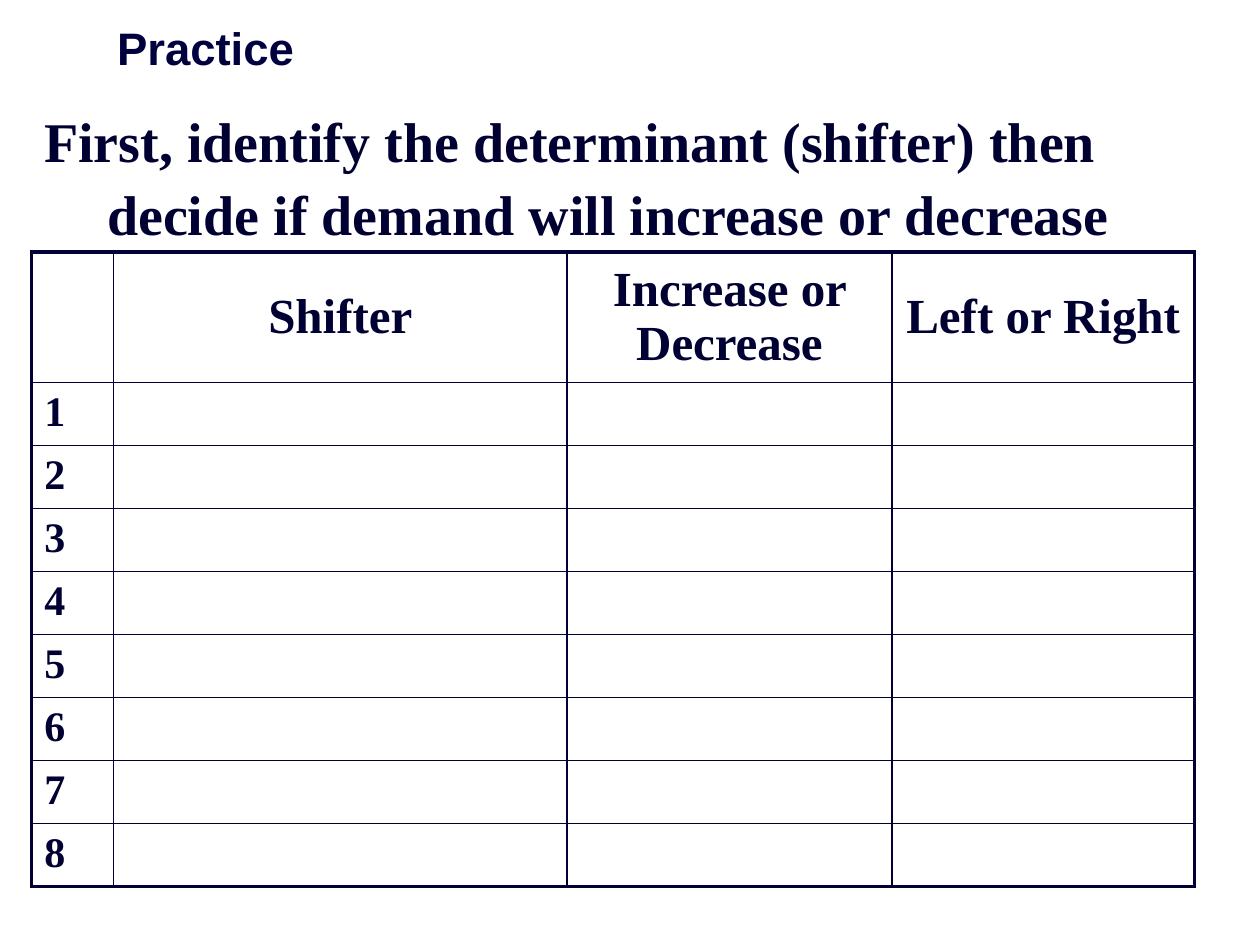
from dataclasses import dataclass

from lxml import etree
from pptx import Presentation
from pptx.dml.color import RGBColor
from pptx.enum import text
from pptx.oxml import ns
from pptx.util import Cm, Pt


@dataclass(frozen=True)
class Theme:
    title_color: str = "00003E"
    ink: str = "000032"
    heading_font: str = "Arial"
    body_font: str = "Times New Roman"
    title_size: float = 26
    prompt_size: float = 32
    header_size: float = 28
    number_size: float = 24
    grid_line: float = 1
    frame_line: float = 2.25


THEME = Theme()
HEADERS = ["", "Shifter", "Increase or Decrease", "Left or Right"]
QUESTION_COUNT = 8
COLUMN_WIDTHS = [1.65, 9.14, 6.55, 6.1]
HEADER_HEIGHT, ROW_HEIGHT = 2.62, 1.27


def write(frame, words, font_format, color, paragraph_format=None):
    """Fill the first paragraph of a frame and format it."""
    paragraph = frame.paragraphs[0]
    paragraph.text = words
    for name, value in (paragraph_format or {}).items():
        setattr(paragraph, name, value)
    font = paragraph.runs[0].font
    for name, value in font_format.items():
        setattr(font, name, value)
    font.color.rgb = RGBColor.from_string(color)
    return paragraph


def add_text_area(slide, box, anchor):
    frame = slide.shapes.add_textbox(*map(Cm, box)).text_frame
    frame.word_wrap = True
    frame.vertical_anchor = anchor
    return frame


def add_title(slide, box):
    frame = add_text_area(slide, box, text.MSO_ANCHOR.MIDDLE)
    write(frame, "Practice",
          {"name": THEME.heading_font, "size": Pt(THEME.title_size), "bold": True},
          THEME.title_color)


def add_prompt(slide, box):
    frame = add_text_area(slide, box, text.MSO_ANCHOR.TOP)
    paragraph = write(
        frame,
        "First, identify the determinant (shifter) then decide if demand will increase or decrease",
        {"name": THEME.body_font, "size": Pt(THEME.prompt_size), "bold": True},
        THEME.ink, {"line_spacing": 1.09})
    # Hanging indent
    properties = paragraph._p.get_or_add_pPr()
    properties.set("marL", str(Cm(1.27)))
    properties.set("indent", str(-Cm(1.27)))


def set_border(cell, side, width):
    line = etree.SubElement(cell._tc.get_or_add_tcPr(), ns.qn(f"a:ln{side}"),
                            w=str(Pt(width)))
    fill = etree.SubElement(line, ns.qn("a:solidFill"))
    etree.SubElement(fill, ns.qn("a:srgbClr"), val=THEME.ink)


def add_answer_table(slide, left, top):
    row_heights = [HEADER_HEIGHT] + [ROW_HEIGHT] * QUESTION_COUNT
    box = (left, top, sum(COLUMN_WIDTHS), sum(row_heights))
    table = slide.shapes.add_table(len(row_heights), len(HEADERS), *map(Cm, box)).table
    table.first_row = table.horz_banding = False
    for column, width in zip(table.columns, COLUMN_WIDTHS):
        column.width = Cm(width)
    for row, height in zip(table.rows, row_heights):
        row.height = Cm(height)

    # Heavy frame around a thin grid
    last_row, last_column = len(row_heights) - 1, len(HEADERS) - 1
    for r in range(last_row + 1):
        for c in range(last_column + 1):
            cell = table.cell(r, c)
            on_frame = {"L": c == 0, "R": c == last_column,
                        "T": r == 0, "B": r == last_row}
            for side, heavy in on_frame.items():
                set_border(cell, side, THEME.frame_line if heavy else THEME.grid_line)
            cell.fill.background()

    # Column headings
    cell_font = {"name": THEME.body_font, "bold": True}
    for c, heading in enumerate(HEADERS):
        if heading:
            cell = table.cell(0, c)
            cell.vertical_anchor = text.MSO_ANCHOR.MIDDLE
            write(cell.text_frame, heading,
                  {**cell_font, "size": Pt(THEME.header_size)}, THEME.ink,
                  {"alignment": text.PP_ALIGN.CENTER})

    # Question numbers
    for number in range(1, QUESTION_COUNT + 1):
        write(table.cell(number, 0).text_frame, str(number),
              {**cell_font, "size": Pt(THEME.number_size)}, THEME.ink)


def main():
    deck = Presentation()
    deck.slide_width, deck.slide_height = Cm(25.4), Cm(19.05)
    slide = deck.slides.add_slide(deck.slide_layouts[6])
    add_title(slide, (2.11, -0.64, 21.59, 3.18))
    add_prompt(slide, (0.64, 1.9, 24.76, 2.97))
    add_answer_table(slide, 0.64, 5.08)
    deck.save("out.pptx")


if __name__ == "__main__":
    main()
